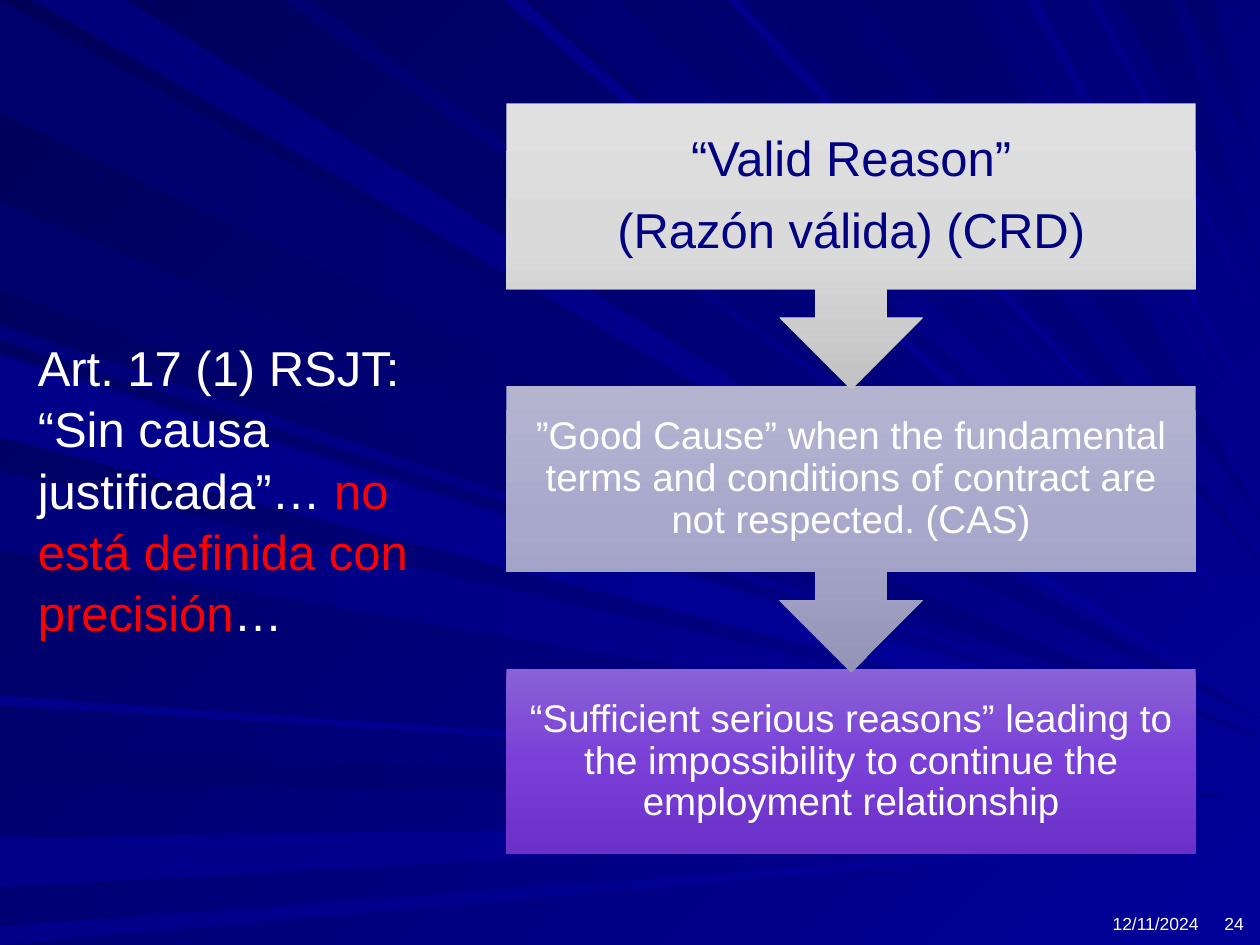
from lxml.etree import SubElement
from pptx import Presentation
from pptx.dml.color import RGBColor
from pptx.enum.shapes import MSO_SHAPE as SHAPE
from pptx.enum.text import MSO_ANCHOR as ANCHOR, MSO_AUTO_SIZE as AUTO, PP_ALIGN as ALIGN
from pptx.oxml.ns import qn
from pptx.util import Inches, Pt

WIDTH, HEIGHT = 10, 7.5

THEME = {
    "font": "Arial", "white": "FFFFFF", "red": "FF0000", "navy": "000080",
    "background": ("000058", "000099"),
    "dark ray": ("00006C", "000080"), "deep ray": ("000070", "000099"),
    "mid ray": ("00007B", "000099"), "light ray": ("000088", "000099"),
    "big": 28, "body": 22, "footer": 10,
}

# Title parts: (text, colour); None is a line break
TITLE = [("Art. 17 (1) RSJT:", "white"), None,
         ("“Sin causa justificada”… ", "white"),
         ("no está definida con precisión", "red"), ("…", "white")]

# Steps from top to bottom: paragraphs, size, colour, inset, gradient
STEPS = [
    (["“Valid Reason”", "(Razón válida) (CRD)"],
     "big", "navy", 0.22, ("E0E0E0", "DADADA", "C2C2C2")),
    (["”Good Cause” when the fundamental terms and conditions of contract "
      "are not respected. (CAS)"],
     "body", "white", 0.17, ("B4B4D1", "A8A8CC", "9494B7")),
    (["“Sufficient serious reasons” leading to the impossibility to continue "
      "the employment relationship"],
     "body", "white", 0.17, ("8A62D6", "793FD7", "6A30C7")),
]

# Footer: text, left, width
FOOTER = [("12/11/2024", 7.36, 2.25), ("24", 9.6, 0.37)]

# Rays narrow to a tip on the right edge: start, end along the edge, tip height
LEFT_RAYS = {
    "dark ray": [(0, 0.9, 5.7), (1.6, 2.3, 5.85), (5.96, 6.23, 6.32)],
    "mid ray": [(2.58, 2.7, 5.9), (2.8, 3.4, 6), (3.74, 4.37, 6.06)],
    "light ray": [(2.83, 3.47, 6.04), (5.52, 5.6, 6.22), (6.65, 7.04, 6.5), (7.35, 7.5, 6.62)],
}
TOP_RAYS = {
    "dark ray": [(6.06, 6.61, 4.46), (6.86, 7.7, 4.1), (8.87, 9.3, 2.1), (9.4, 9.64, 1.4)],
    "deep ray": [(2.25, 2.47, 5.5), (4.26, 4.92, 4.95), (5.4, 5.52, 4.63)],
    "mid ray": [(0.26, 1, 5.63), (7.85, 7.92, 3.57)],
    "light ray": [(4, 4.16, 5.18), (5.77, 5.88, 4.54), (8.15, 8.24, 3.36), (8.65, 8.72, 2.54)],
}


def paint(fill, element, colours, angle):
    """Fill with evenly spaced stops at a clockwise angle."""
    fill.gradient()
    fill.gradient_angle = -angle % 360
    stops = element.find(".//" + qn("a:gsLst"))
    for old in list(stops):
        stops.remove(old)
    for i, colour in enumerate(colours):
        stop = SubElement(stops, qn("a:gs"), pos=str(100000 * i // (len(colours) - 1)))
        SubElement(stop, qn("a:srgbClr"), val=colour)


def finish(sp, colours, angle):
    sp.shadow.inherit = False
    sp.line.fill.background()
    paint(sp.fill, sp._element, colours, angle)


def add_ray(corners, colours, angle):
    points = [(round(x * 100), round(y * 100)) for x, y in corners]
    ray = s.shapes.build_freeform(*points[0], scale=Inches(0.01))
    ray.add_line_segments(points[1:], close=True)
    finish(ray.convert_to_shape(), colours, angle)


def add_run(p, text, size, colour):
    r = p.add_run()
    r.text = text
    r.font.name = THEME["font"]
    r.font.size = Pt(THEME[size])
    r.font.color.rgb = RGBColor.from_string(THEME[colour])


def place(sp, left, top, width, height):
    sp.left, sp.top, sp.width, sp.height = map(Inches, (left, top, width, height))


prs = Presentation()
prs.slide_width, prs.slide_height = Inches(WIDTH), Inches(HEIGHT)
s = prs.slides.add_slide(prs.slide_layouts[5])

# Background and rays
paint(s.background.fill, s._element, THEME["background"], 45)
for shade, rays in LEFT_RAYS.items():
    for start, end, tip in rays:
        add_ray([(0, start), (0, end), (WIDTH, tip)], THEME[shade], 0)
for shade, rays in TOP_RAYS.items():
    for start, end, tip in rays:
        add_ray([(start, 0), (end, 0), (WIDTH, tip)], THEME[shade], 45)

# Title, brought in front of the rays
title = s.shapes.title
s.shapes._spTree.append(title._element)
place(title, 0.2, 1.84, 3.16, 3.88)
tf = title.text_frame
tf.word_wrap, tf.auto_size = True, AUTO.NONE
tf.vertical_anchor, tf.margin_bottom = ANCHOR.BOTTOM, Inches(0.63)
p = tf.paragraphs[0]
p.alignment, p.line_spacing = ALIGN.LEFT, 1.04
for part in TITLE:
    if part is None:
        p.add_line_break()
    else:
        add_run(p, part[0], "big", part[1])

# Footer
for text, left, width in FOOTER:
    sp = s.shapes.add_textbox(0, 0, 0, 0)
    place(sp, left, 7.06, width, 0.4)
    tf = sp.text_frame
    tf.word_wrap, tf.vertical_anchor = True, ANCHOR.BOTTOM
    p = tf.paragraphs[0]
    p.alignment, p.space_after = ALIGN.RIGHT, Pt(6)
    add_run(p, text, "footer", "white")

# Steps: callouts pointing down, the last one a plain box; drawn bottom up
FIRST_TOP, LAST_TOP = 0.82, 5.31
last = len(STEPS) - 1
for i, (lines, size, colour, inset, colours) in reversed(list(enumerate(STEPS))):
    kind, height = (SHAPE.RECTANGLE, 1.47) if i == last else (SHAPE.DOWN_ARROW_CALLOUT, 2.27)
    sp = s.shapes.add_shape(kind, 0, 0, 0, 0)
    place(sp, 4.02, FIRST_TOP + i * (LAST_TOP - FIRST_TOP) / last, 5.47, height)
    finish(sp, colours, 90)
    tf = sp.text_frame
    tf.word_wrap, tf.vertical_anchor = True, ANCHOR.MIDDLE
    tf.margin_left = tf.margin_right = tf.margin_top = tf.margin_bottom = Inches(inset)
    for n, line in enumerate(lines):
        p = tf.add_paragraph() if n else tf.paragraphs[0]
        p.alignment, p.line_spacing = ALIGN.CENTER, 0.9
        p.space_after = Pt(round(THEME[size] * 0.39))
        add_run(p, line, size, colour)

prs.save("out.pptx")
